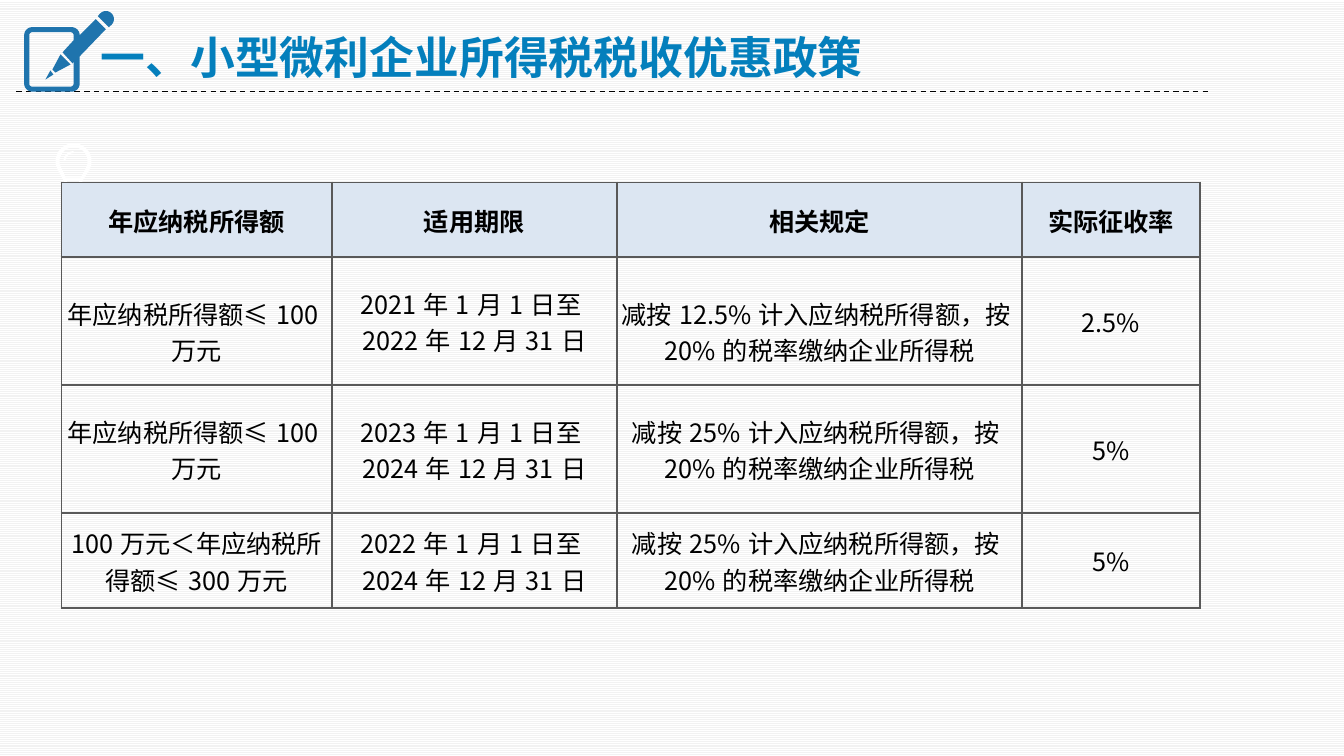
import math

import pptx
import pptx.dml.color
import pptx.enum.dml
import pptx.enum.shapes
import pptx.enum.text
import pptx.oxml
import pptx.oxml.ns
import pptx.util
from pptx.util import Inches

FONT = "Noto Sans CJK SC"
color = pptx.dml.color.RGBColor.from_string
qn = pptx.oxml.ns.qn


def arc(center_x, center_y, radius, start, end):
    angles = [math.radians(start + (end - start) * step / 12) for step in range(13)]
    return [(center_x + radius * math.cos(a), center_y + radius * math.sin(a)) for a in angles]


def style(para, size, hex_color, bold):
    para.font.size = pptx.util.Pt(size)
    para.font.bold = bold
    para.font.color.rgb = color(hex_color)
    para.font.name = FONT
    properties = para._p.get_or_add_pPr().find(qn("a:defRPr"))
    properties.append(properties.makeelement(qn("a:ea"), {"typeface": FONT}))


deck = pptx.Presentation()
deck.slide_width = Inches(13.33)
deck.slide_height = Inches(7.5)
page = deck.slides.add_slide(deck.slide_layouts[6])

backdrop = page.background.fill
backdrop.patterned()
backdrop.pattern = pptx.enum.dml.MSO_PATTERN.NARROW_HORIZONTAL
backdrop.fore_color.rgb = color("F2F2F2")
backdrop.back_color.rgb = color("FFFFFF")

rule = page.shapes.add_connector(
    pptx.enum.shapes.MSO_CONNECTOR.STRAIGHT,
    Inches(0.16), Inches(0.91), Inches(11.99), Inches(0.91))
rule.line.color.rgb = color("000000")
rule.line.width = pptx.util.Pt(1)
rule.line.dash_style = pptx.enum.dml.MSO_LINE.DASH
line_properties = rule._element.spPr
line_properties.append(line_properties.makeelement(qn("a:effectLst"), {}))

bulb = [
    arc(0.73, 1.6, 0.18, 150, 390)
    + [(0.82, 1.79), (0.79, 1.89), (0.76, 1.92), (0.73, 1.93),
       (0.7, 1.92), (0.67, 1.89), (0.63, 1.79)],
    arc(0.73, 1.6, 0.14, 150, 390) + [(0.83, 1.71), (0.8, 1.76), (0.65, 1.76), (0.63, 1.71)],
    [(0.66, 1.79), (0.79, 1.79), (0.78, 1.81), (0.67, 1.82)],
    [(0.68, 1.84), (0.78, 1.82), (0.77, 1.86), (0.69, 1.87)],
    [(0.69, 1.88), (0.76, 1.87), (0.75, 1.9), (0.71, 1.9)],
]
glint = [arc(0.73, 1.6, 0.1, 180, 270) + arc(0.73, 1.6, 0.08, 270, 180)]
pencil_and_pad = [
    arc(0.32, 0.35, 0.08, 180, 270) + arc(0.71, 0.35, 0.08, 270, 360)
    + [(0.95, 0.19), (1.05, 0.29), (0.79, 0.56)]
    + arc(0.71, 0.83, 0.08, 0, 90) + arc(0.32, 0.83, 0.08, 90, 180),
    arc(0.32, 0.35, 0.03, 180, 270) + arc(0.7, 0.35, 0.03, 270, 360)
    + [(0.73, 0.4), (0.62, 0.52), (0.72, 0.63), (0.73, 0.61)]
    + arc(0.7, 0.83, 0.03, 0, 90) + arc(0.32, 0.83, 0.03, 90, 180),
    [(0.6, 0.54), (0.7, 0.64), (0.55, 0.72), (0.52, 0.69)],
    [(0.5, 0.7), (0.53, 0.74), (0.45, 0.79)],
    [(1.08, 0.27), (0.97, 0.16)] + arc(1.05, 0.19, 0.08, 225, 405),
]
for contours, hex_color in ((bulb, "FFFFFF"), (glint, "FFFFFF"), (pencil_and_pad, "1F74AD")):
    outlines = [[(Inches(x), Inches(y)) for x, y in contour] for contour in contours]
    builder = page.shapes.build_freeform(*outlines[0][0])
    builder.add_line_segments(outlines[0][1:])
    for outline in outlines[1:]:
        builder.move_to(*outline[0])
        builder.add_line_segments(outline[1:])
    icon = builder.convert_to_shape()
    icon.shadow.inherit = False
    icon.fill.solid()
    icon.fill.fore_color.rgb = color(hex_color)
    icon.line.fill.background()

title = page.shapes.add_textbox(Inches(0.9), Inches(0.25), Inches(12.43), Inches(0.64)).text_frame
title.word_wrap = True
title.text = "一、小型微利企业所得税税收优惠政策"
style(title.paragraphs[0], 32, "047FBC", True)

quarter_rule = "减按25%计入应纳税所得额，按20%的税率缴纳企业所得税"
policies = [
    ["年应纳税所得额", "适用期限", "相关规定", "实际征收率"],
    ["年应纳税所得额≤100万元", "2021年1月1日至2022年12月31日",
     "减按12.5%计入应纳税所得额，按20%的税率缴纳企业所得税", "2.5%"],
    ["年应纳税所得额≤100万元", "2023年1月1日至2024年12月31日", quarter_rule, "5%"],
    ["100万元＜年应纳税所得额≤300万元", "2022年1月1日至2024年12月31日", quarter_rule, "5%"],
]
table = page.shapes.add_table(
    4, 4, Inches(0.61), Inches(1.81), Inches(11.29), Inches(4.22)).table
for column, width in zip(table.columns, (2.68, 2.83, 4.02, 1.76)):
    column.width = Inches(width)
for row, height in zip(table.rows, (0.74, 1.27, 1.27, 0.94)):
    row.height = Inches(height)

for row_index, policy in enumerate(policies):
    for column_index, text in enumerate(policy):
        cell = table.cell(row_index, column_index)
        cell.text = text
        cell.vertical_anchor = pptx.enum.text.MSO_ANCHOR.MIDDLE
        cell.margin_left = cell.margin_right = Inches(0.01)
        lowered = row_index == 1 and column_index in (0, 2)
        cell.margin_top = Inches(0.21 if lowered else 0.01)
        cell.margin_bottom = 0
        para = cell.text_frame.paragraphs[0]
        para.alignment = pptx.enum.text.PP_ALIGN.CENTER
        style(para, 18, "000000", row_index == 0)
        for side in ("lnL", "lnR", "lnT", "lnB"):
            cell._tc.get_or_add_tcPr().append(pptx.oxml.parse_xml(
                f'<a:{side} xmlns:a="http://schemas.openxmlformats.org/drawingml/2006/main" w="19050">'
                f'<a:solidFill><a:srgbClr val="595959"/></a:solidFill></a:{side}>'))
        if row_index == 0:
            cell.fill.solid()
            cell.fill.fore_color.rgb = color("DCE6F2")
        else:
            cell.fill.background()

deck.save("out.pptx")
